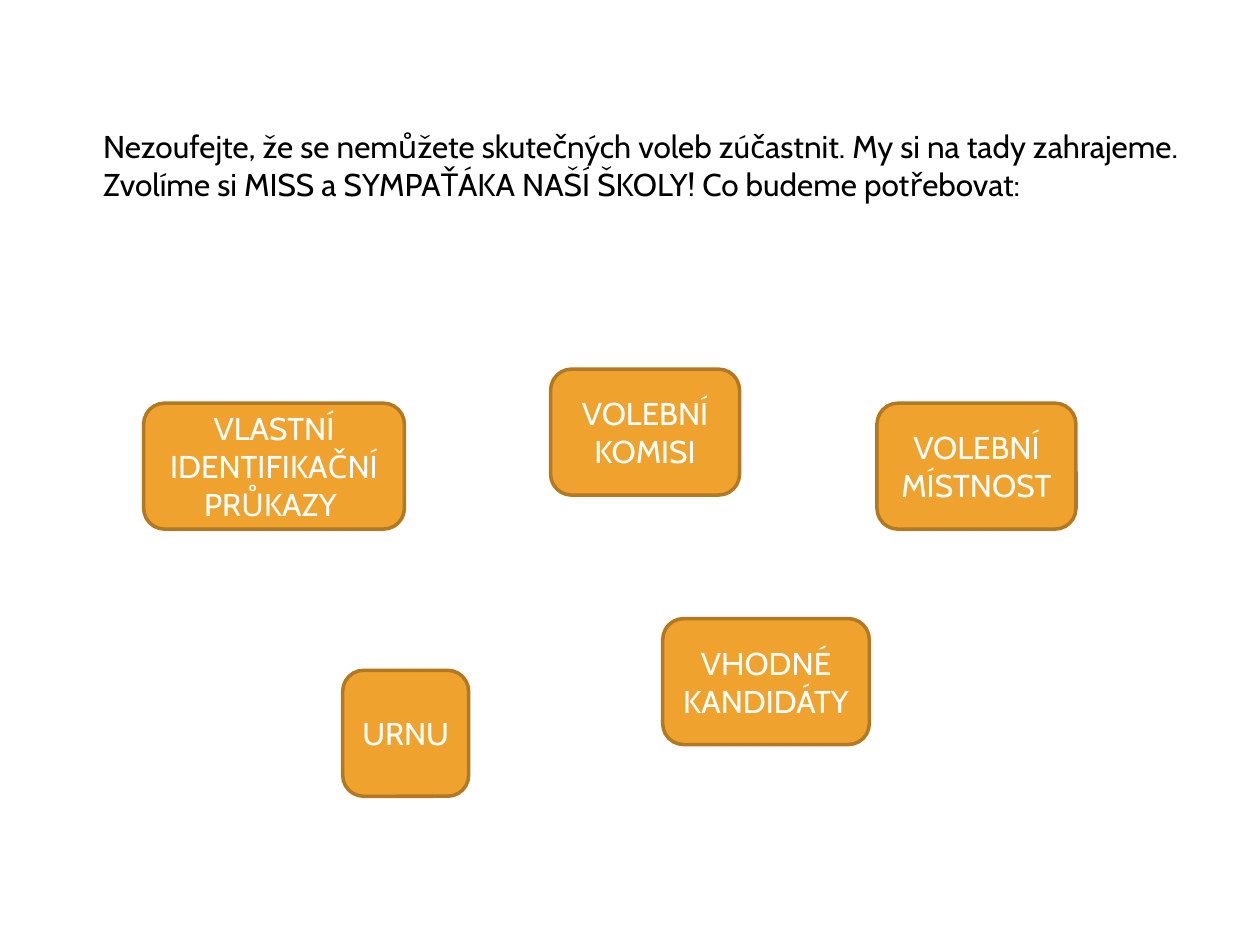
"""Build a slide listing what a school election needs."""
from pptx import Presentation
from pptx.dml.color import RGBColor
from pptx.enum.shapes import MSO_SHAPE as Shape
from pptx.enum.text import MSO_ANCHOR as Anchor, PP_ALIGN as Align
from pptx.util import Inches, Pt

FONT = "Cabin"
BLACK = RGBColor(0x00, 0x00, 0x00)
WHITE = RGBColor(0xFF, 0xFF, 0xFF)
ORANGE = RGBColor(0xF0, 0xA2, 0x2E)
BROWN = RGBColor(0xB2, 0x78, 0x22)

INTRO = [
    "Nezoufejte, že se nemůžete skutečných voleb zúčastnit. My si na tady zahrajeme.",
    "Zvolíme si MISS a SYMPAŤÁKA NAŠÍ ŠKOLY! Co budeme potřebovat:",
]
CARD_HEIGHT = 1
NEEDS = [
    ("VLASTNÍ IDENTIFIKAČNÍ PRŮKAZY ", 1.14, 3.2, 2.07),
    ("VOLEBNÍ KOMISI", 4.37, 2.93, 1.5),
    ("VOLEBNÍ MÍSTNOST", 6.96, 3.2, 1.58),
    ("URNU", 2.72, 5.32, 1),
    ("VHODNÉ KANDIDÁTY", 5.26, 4.91, 1.64),
]


def write_lines(frame, lines, color, align):
    """Fill a text frame with one paragraph per line."""
    frame.word_wrap = True
    frame.text = "\n".join(lines)
    for paragraph in frame.paragraphs:
        paragraph.alignment = align
        paragraph.font.name = FONT
        paragraph.font.size = Pt(18)
        paragraph.font.color.rgb = color


def add_intro(slide):
    """Add the opening text above the cards."""
    intro = slide.shapes.add_textbox(Inches(0.72), Inches(0.96), Inches(8.8), Inches(0.71))
    write_lines(intro.text_frame, INTRO, BLACK, Align.LEFT)


def add_need(slide, label, left, top, width):
    """Add one rounded card naming a thing the election needs."""
    card = slide.shapes.add_shape(
        Shape.ROUNDED_RECTANGLE, Inches(left), Inches(top), Inches(width), Inches(CARD_HEIGHT)
    )
    card.shadow.inherit = False
    card.fill.solid()
    card.fill.fore_color.rgb = ORANGE
    card.line.color.rgb = BROWN
    card.line.width = Pt(2)
    card.text_frame.vertical_anchor = Anchor.MIDDLE
    write_lines(card.text_frame, [label], WHITE, Align.CENTER)


def main():
    """Create the slide and save it."""
    deck = Presentation()
    deck.slide_width, deck.slide_height = Inches(10), Inches(7.5)
    slide = deck.slides.add_slide(deck.slide_layouts.get_by_name("Blank"))
    add_intro(slide)
    for need in NEEDS:
        add_need(slide, *need)
    deck.save("out.pptx")


if __name__ == "__main__":
    main()
